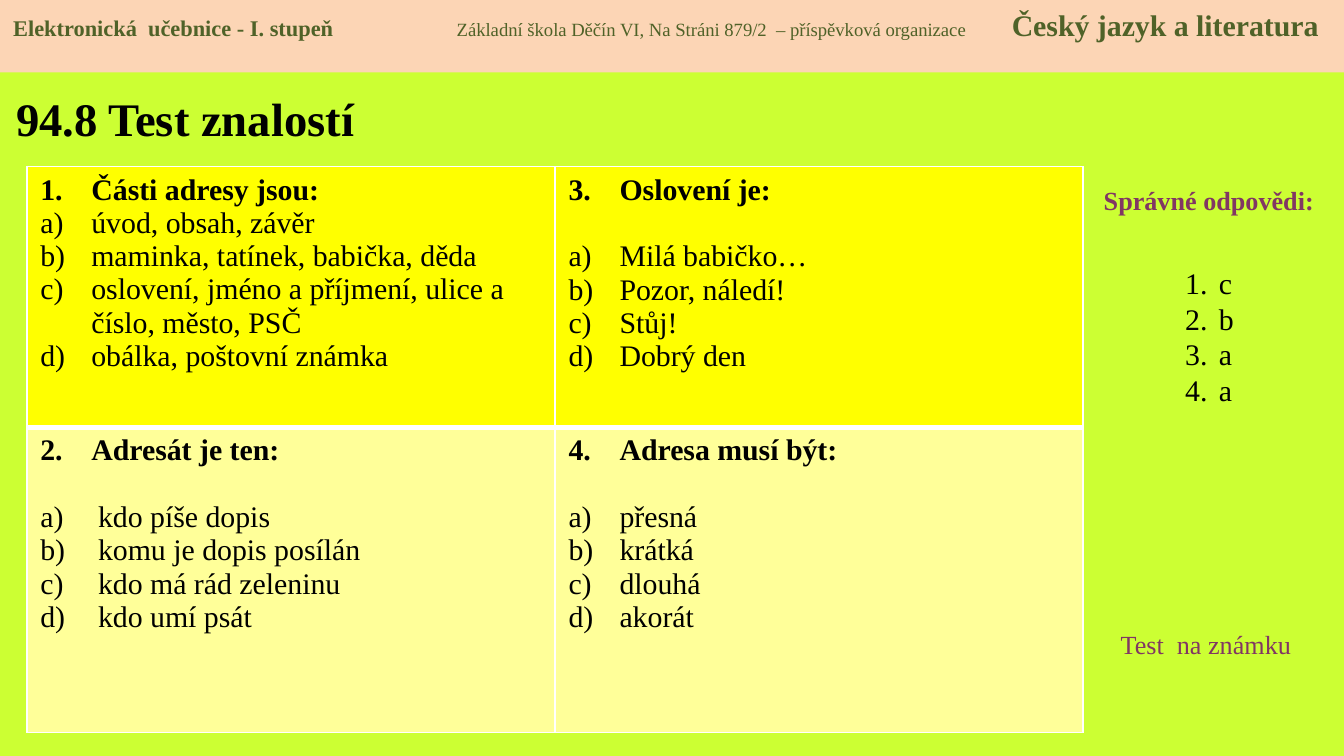
"""Build a quiz slide with a header band, a two-by-two question table and the answers."""
import pptx
import pptx.dml.color
import pptx.enum.shapes
import pptx.enum.text
import pptx.oxml
import pptx.oxml.ns
import pptx.util

Inches, Pt = pptx.util.Inches, pptx.util.Pt
ALIGN, ANCHOR = pptx.enum.text.PP_ALIGN, pptx.enum.text.MSO_ANCHOR
FONT = "Times New Roman"
BLACK, PURPLE, GREEN, WHITE = "000000", "813763", "4F6228", "FFFFFF"

TITLE = "94.8 Test znalostí"
HEADER = [
    ("Elektronická  učebnice - I. stupeň", 12, True),
    ("Základní škola Děčín VI, Na Stráni 879/2  – příspěvková organizace", 10, False),
    ("Český jazyk a literatura", 16, True),
]
HEADER_TABS = [3.3, 7.43]
QUESTIONS = [
    {"row": 0, "col": 0, "ask": "Části adresy jsou:", "gap": 0, "indent": 0.38,
     "options": ["úvod, obsah, závěr", "maminka, tatínek, babička, děda",
                 "oslovení, jméno a příjmení, ulice a číslo, město, PSČ",
                 "obálka, poštovní známka"]},
    {"row": 1, "col": 0, "ask": "Adresát je ten:", "gap": 18, "indent": 0.43,
     "options": ["kdo píše dopis", "komu je dopis posílán",
                 "kdo má rád zeleninu", "kdo umí psát"]},
    {"row": 0, "col": 1, "ask": "Oslovení je:", "gap": 18, "indent": 0.38,
     "options": ["Milá babičko…", "Pozor, náledí!", "Stůj!", "Dobrý den"]},
    {"row": 1, "col": 1, "ask": "Adresa musí být:", "gap": 18, "indent": 0.38,
     "options": ["přesná", "krátká", "dlouhá", "akorát"]},
]
ROW_HEIGHTS = [1.94, 2.27]
ROW_FILLS = ["FFFF00", "FFFF99"]
COL_WIDTH = 3.93
ANSWERS = ["c", "b", "a", "a"]


def color(value):
    return pptx.dml.color.RGBColor.from_string(value)


def paint(fill, value):
    fill.solid()
    fill.fore_color.rgb = color(value)


def element(tag, attributes="", content=""):
    return pptx.oxml.parse_xml(
        f"<a:{tag} {pptx.oxml.ns.nsdecls('a')} {attributes}>{content}</a:{tag}>")


def add_run(p, text, size, value=BLACK, bold=False):
    r = p.add_run()
    r.text = text
    r.font.name, r.font.size, r.font.bold = FONT, Pt(size), bold
    r.font.color.rgb = color(value)


def add_item(tf, text, scheme, indent, pitch, bold=False, start=1):
    p = tf.add_paragraph() if tf.paragraphs[0].runs else tf.paragraphs[0]
    add_run(p, text, 16, bold=bold)
    p.line_spacing = Pt(pitch)
    pPr = p._p.get_or_add_pPr()
    pPr.set("marL", str(Inches(indent)))
    pPr.set("indent", str(-Inches(indent)))
    pPr.append(element("buAutoNum", f'type="{scheme}" startAt="{start}"'))
    return p


def add_box(s, left, top, width, height):
    sp = s.shapes.add_textbox(Inches(left), Inches(top), Inches(width), Inches(height))
    sp.text_frame.word_wrap = True
    return sp.text_frame


def set_borders(cell, bottom):
    tcPr = cell._tc.get_or_add_tcPr()
    line_fill = f'<a:solidFill><a:srgbClr val="{WHITE}"/></a:solidFill>'
    for i, (side, width) in enumerate(zip("LRTB", (1, 1, 1, bottom))):
        tcPr.insert(i, element(f"ln{side}", f'w="{Pt(width)}"', line_fill))


def add_title(s):
    sp = s.shapes.title
    sp.left, sp.top, sp.width, sp.height = map(Inches, (0.02, 0.55, 3.19, 0.65))
    sp.text_frame.vertical_anchor = ANCHOR.MIDDLE
    p = sp.text_frame.paragraphs[0]
    p.alignment = ALIGN.LEFT
    add_run(p, TITLE, 25, bold=True)


def add_header(s, width):
    sp = s.shapes.add_shape(pptx.enum.shapes.MSO_SHAPE.RECTANGLE,
                            0, 0, width, Inches(0.54))
    sp.shadow.inherit = False
    sp.line.fill.background()
    paint(sp.fill, "FCD5B5")
    sp.text_frame.vertical_anchor = ANCHOR.TOP
    p = sp.text_frame.paragraphs[0]
    p.alignment = ALIGN.LEFT
    stops = "".join(f'<a:tab pos="{Inches(x)}" algn="l"/>' for x in HEADER_TABS)
    p._p.get_or_add_pPr().append(element("tabLst", content=stops))
    for i, (text, size, bold) in enumerate(HEADER):
        add_run(p, "\t" + text if i else text, size, GREEN, bold)


def add_questions(s):
    table = s.shapes.add_table(2, 2, Inches(0.2), Inches(1.24),
                               Inches(2 * COL_WIDTH), Inches(sum(ROW_HEIGHTS))).table
    for column in table.columns:
        column.width = Inches(COL_WIDTH)
    for row, height in zip(table.rows, ROW_HEIGHTS):
        row.height = Inches(height)
    for number, q in enumerate(QUESTIONS, 1):
        cell = table.cell(q["row"], q["col"])
        paint(cell.fill, ROW_FILLS[q["row"]])
        set_borders(cell, 1 if q["row"] else 3)
        tf = cell.text_frame
        p = add_item(tf, q["ask"], "arabicPeriod", 0.38, 17.8, True, number)
        p.space_after = Pt(q["gap"])
        for option in q["options"]:
            add_item(tf, option, "alphaLcParenR", q["indent"], 17.8)


def add_answers(s):
    p = add_box(s, 8.05, 1.32, 1.89, 0.34).paragraphs[0]
    p.alignment = ALIGN.CENTER
    add_run(p, "Správné odpovědi:", 14, PURPLE, True)
    tf = add_box(s, 8.72, 1.92, 0.55, 1.72)
    for answer in ANSWERS:
        add_item(tf, answer, "arabicPeriod", 0.25, 19.1)
    p = add_box(s, 8.24, 4.63, 1.57, 0.34).paragraphs[0]
    add_run(p, "Test  na známku", 14, PURPLE)


def main():
    prs = pptx.Presentation()
    prs.slide_width = Inches(10)
    prs.slide_height = prs.slide_width * 9 // 16
    s = prs.slides.add_slide(prs.slide_layouts[5])
    paint(s.background.fill, "CCFF33")
    add_title(s)
    add_questions(s)
    add_answers(s)
    add_header(s, prs.slide_width)
    prs.save("out.pptx")


if __name__ == "__main__":
    main()
